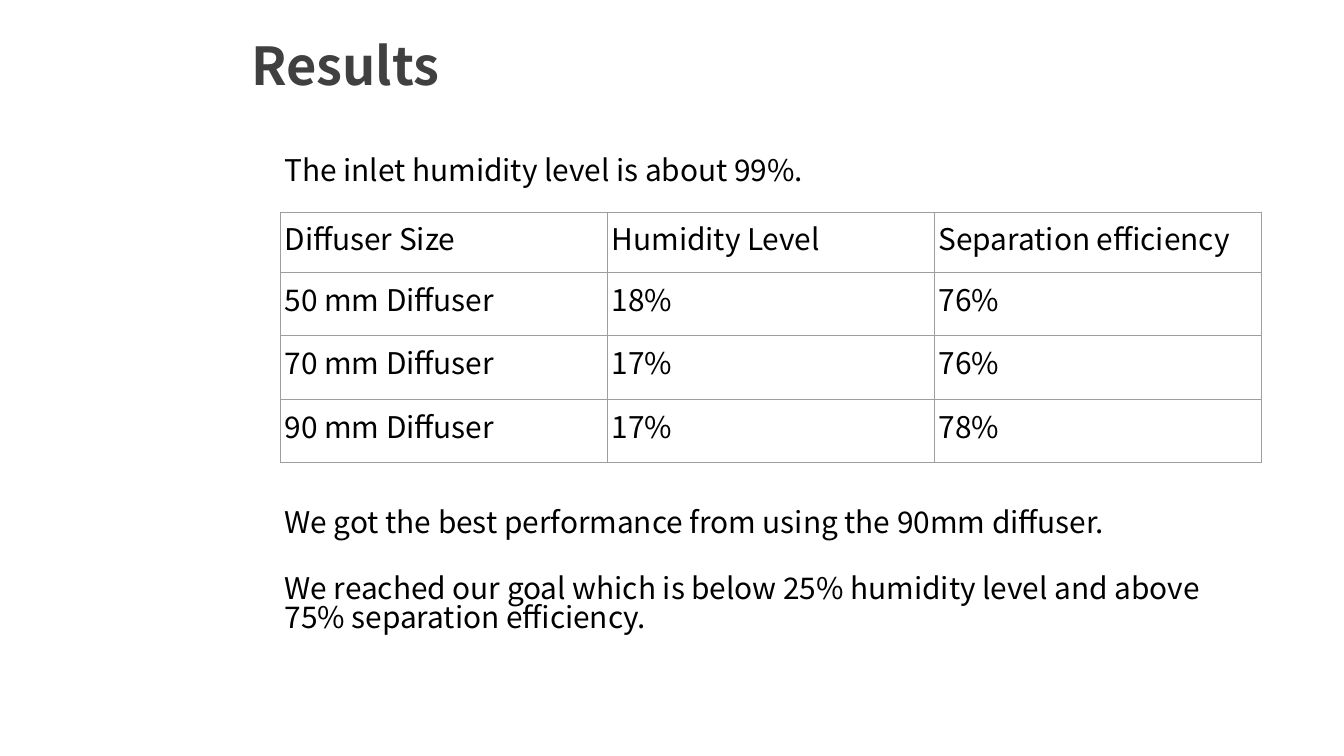
from lxml.etree import SubElement
from pptx import Presentation
from pptx.dml.color import RGBColor
from pptx.enum.text import MSO_ANCHOR, PP_ALIGN
from pptx.oxml.ns import qn
from pptx.util import Cm, Pt

FONT = "Noto Sans CJK KR"
TITLE_COLOR = "404040"
TEXT_COLOR = "000000"
BORDER_COLOR = "9E9E9E"

RESULTS = [
    ["Diffuser Size", "Humidity Level", "Separation efficiency"],
    ["50 mm Diffuser", "18%", "76%"],
    ["70 mm Diffuser", "17%", "76%"],
    ["90 mm Diffuser", "17%", "78%"],
]
STATEMENTS = [
    ("The inlet humidity level is about 99%.", 0),
    ("We got the best performance from using the 90mm diffuser.", 172.5),
    ("We reached our goal which is below 25% humidity level and above "
     "75% separation efficiency.", 19.3),
]


def rgb(color):
    return RGBColor.from_string(color)


class SlideBuilder:
    def __init__(self, slide):
        self.slide = slide
        self.size = 16

    def style(self, p, size=None, color=TEXT_COLOR, bold=False):
        p.alignment = PP_ALIGN.LEFT
        for r in p.runs:
            r.font.name = FONT
            r.font.size = Pt(size or self.size)
            r.font.bold = bold
            r.font.color.rgb = rgb(color)

    def title(self, text, left, top, width, height):
        sp = self.slide.shapes.title
        sp.left, sp.top, sp.width, sp.height = map(Cm, (left, top, width, height))
        tf = sp.text_frame
        tf.text = text
        tf.vertical_anchor = MSO_ANCHOR.MIDDLE
        self.style(tf.paragraphs[0], 28, TITLE_COLOR, True)

    def border(self, cell):
        tc_pr = cell._tc.get_or_add_tcPr()
        for i, side in enumerate(("a:lnL", "a:lnR", "a:lnT", "a:lnB")):
            ln = tc_pr.makeelement(qn(side), {"w": str(Pt(0.71))})
            fill = SubElement(ln, qn("a:solidFill"))
            SubElement(fill, qn("a:srgbClr"), val=BORDER_COLOR)
            tc_pr.insert(i, ln)

    def table(self, rows, left, top, col_width, row_heights):
        cols = len(rows[0])
        frame = self.slide.shapes.add_table(
            len(rows), cols, Cm(left), Cm(top),
            Cm(col_width * cols), Cm(sum(row_heights)))
        table = frame.table
        table.first_row = table.horz_banding = False
        for col in table.columns:
            col.width = Cm(col_width)
        for row, height, texts in zip(table.rows, row_heights, rows):
            row.height = Cm(height)
            for cell, text in zip(row.cells, texts):
                cell.text = text
                cell.margin_left = cell.margin_right = Cm(0.08)
                cell.margin_top = cell.margin_bottom = Cm(0.08)
                cell.fill.background()
                self.border(cell)
                self.style(cell.text_frame.paragraphs[0])

    def body(self, statements, left, top, width, height):
        sp = self.slide.shapes.add_textbox(*map(Cm, (left, top, width, height)))
        tf = sp.text_frame
        tf.word_wrap = True
        tf.margin_left = Cm(1.09)
        for i, (text, gap) in enumerate(statements):
            p = tf.add_paragraph() if i else tf.paragraphs[0]
            p.text = text
            p.line_spacing = 0.83
            p.space_before = Pt(gap)
            self.style(p)


def main():
    prs = Presentation()
    prs.slide_width, prs.slide_height = Cm(25.4), Cm(14.29)
    s = SlideBuilder(prs.slides.add_slide(prs.slide_layouts[5]))
    s.title("Results", 4.5, 0, 20.9, 2.46)
    s.table(RESULTS, 5.3, 4.01, 6.18, [1.14, 1.2, 1.2, 1.2])
    s.body(STATEMENTS, 4.29, 2.86, 19.23, 10.21)
    prs.save("out.pptx")


if __name__ == "__main__":
    main()
